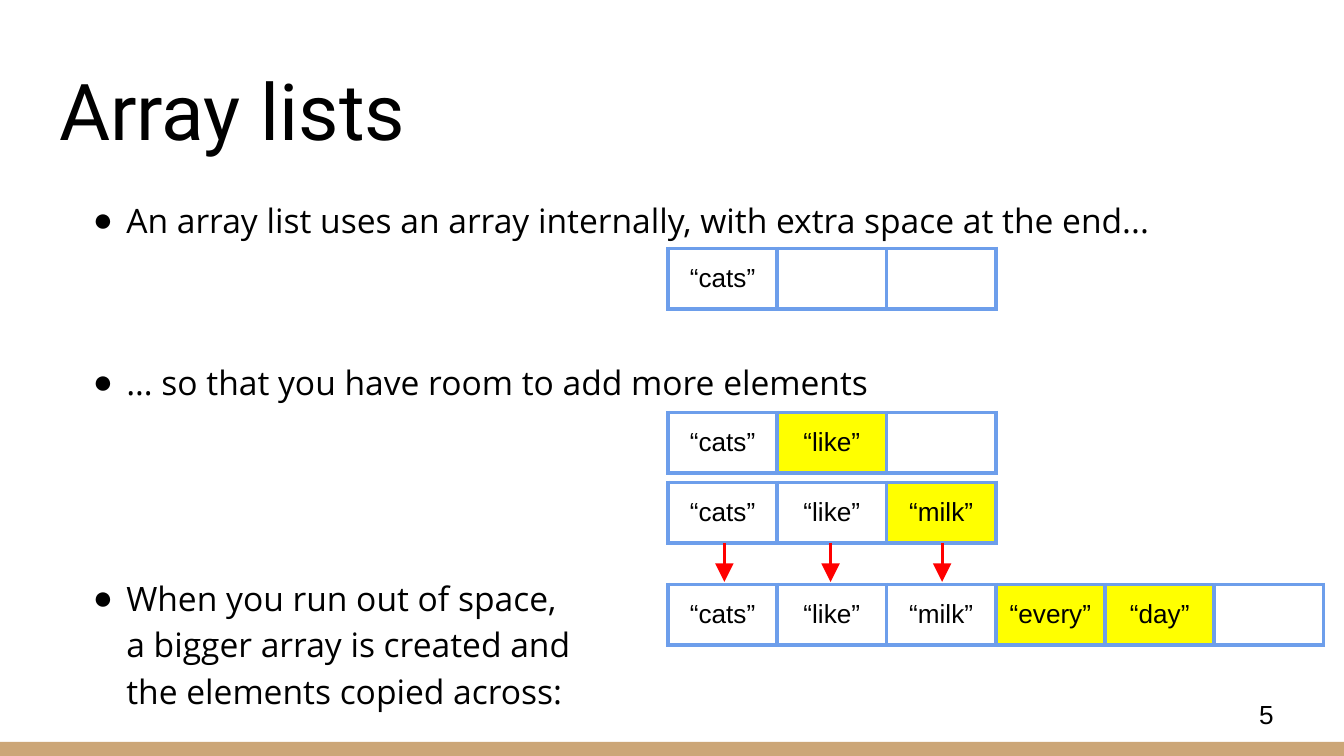
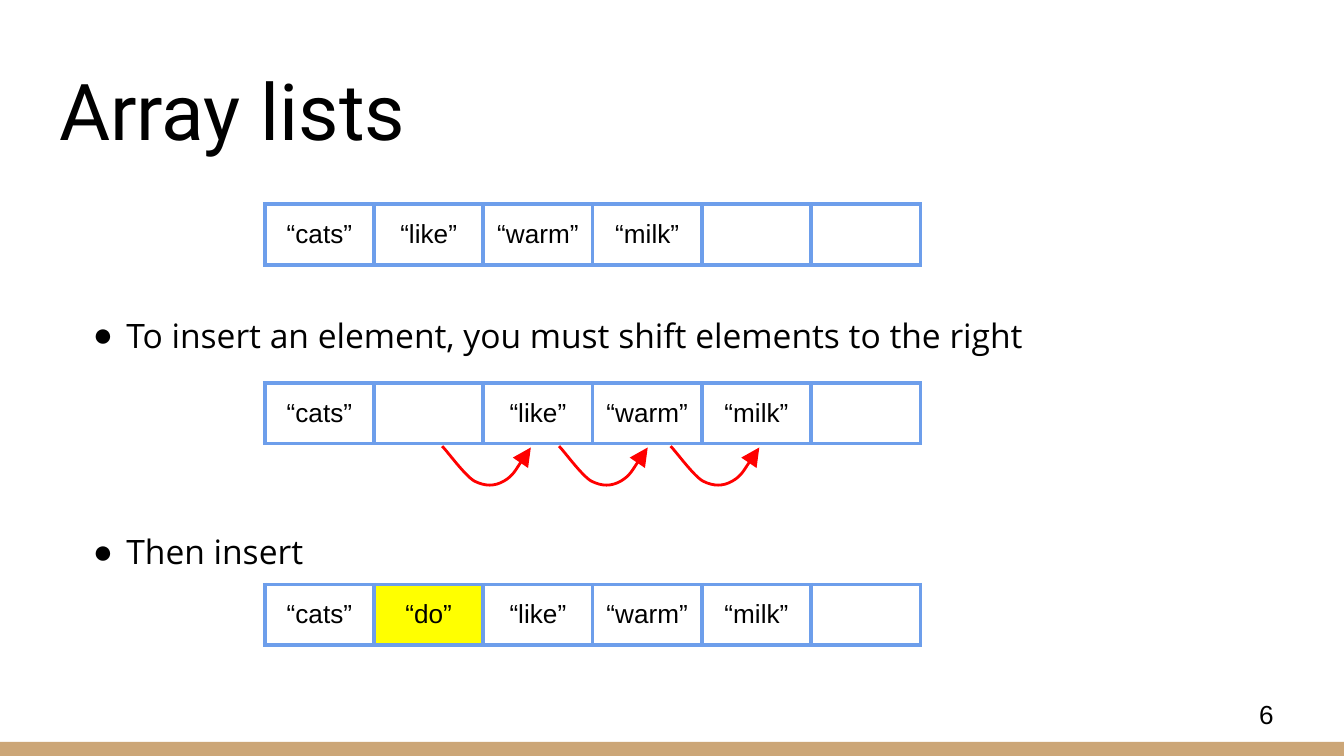
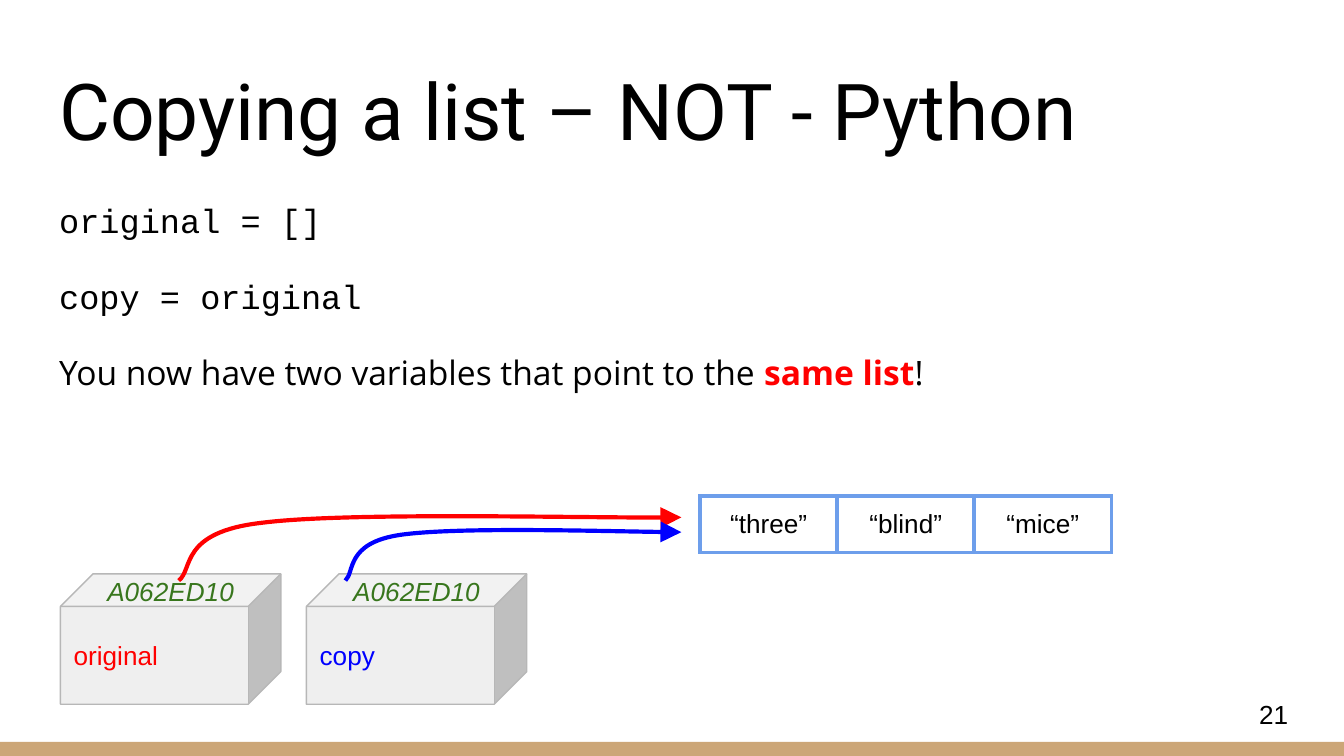
from dataclasses import dataclass

from lxml.etree import SubElement
from pptx import Presentation
from pptx.dml.color import RGBColor
from pptx.enum.shapes import MSO_CONNECTOR, MSO_SHAPE
from pptx.enum.text import MSO_ANCHOR, MSO_AUTO_SIZE, PP_ALIGN
from pptx.oxml.ns import qn
from pptx.util import Emu, Pt

EMU_PER_PX = 9144


@dataclass(frozen=True)
class Theme:
    black: str = "000000"
    band: str = "CCA677"
    grid: str = "6D9EEB"
    highlight: str = "FFFF00"
    red: str = "FF0000"
    blue: str = "0000FF"
    address: str = "38761D"
    cube_fill: str = "EFEFEF"
    cube_line: str = "B7B7B7"
    title_font: str = "Roboto"
    body_font: str = "Open Sans"
    code_font: str = "Courier New"
    label_font: str = "Arial"
    title_size: int = 42
    body_size: int = 18
    label_size: int = 14


THEME = Theme()


@dataclass(frozen=True)
class Span:
    text: str
    font: str = THEME.body_font
    color: str = THEME.black
    bold: bool = False


@dataclass(frozen=True)
class BodyPara:
    spans: tuple[Span, ...]
    bullet: bool = True
    after: int = 16


@dataclass(frozen=True)
class ArrayRow:
    """A one-row table; highlighted holds the indexes of the yellow cells."""
    left: int
    top: int
    words: tuple[str, ...]
    highlighted: tuple[int, ...] = ()
    width: int = 488
    height: int = 45


@dataclass(frozen=True)
class Variable:
    left: int
    name: str
    color: str
    pointer: tuple[tuple[int, int], ...]


def px(length: int) -> Emu:
    return Emu(length * EMU_PER_PX)


def rgb(color: str) -> RGBColor:
    return RGBColor.from_string(color)


# Text
def add_text(para, text: str, *, size: int = THEME.label_size,
             font: str = THEME.label_font, color: str = THEME.black,
             bold: bool = False, italic: bool = False, align=PP_ALIGN.LEFT) -> None:
    para.alignment = align
    for number, line in enumerate(text.split("\n")):
        if number:
            para.add_line_break()
        span = para.add_run()
        span.text = line
        span.font.size, span.font.name = Pt(size), font
        span.font.bold, span.font.italic = bold, italic
        span.font.color.rgb = rgb(color)


def set_frame(frame, anchor, margin_top: int = 10) -> None:
    frame.word_wrap = True
    frame.auto_size = MSO_AUTO_SIZE.NONE
    frame.vertical_anchor = anchor
    frame.margin_left = frame.margin_right = frame.margin_bottom = px(10)
    frame.margin_top = px(margin_top)


def place(shape, left: int, top: int, width: int, height: int) -> None:
    shape.left, shape.top = px(left), px(top)
    shape.width, shape.height = px(width), px(height)


def add_label(page, text: str, left: int, top: int, width: int, height: int,
              anchor=MSO_ANCHOR.TOP, **text_format) -> None:
    box = page.shapes.add_textbox(px(left), px(top), px(width), px(height))
    set_frame(box.text_frame, anchor)
    add_text(box.text_frame.paragraphs[0], text, **text_format)


def set_bullet(para, shown: bool) -> None:
    properties = para._p.get_or_add_pPr()
    properties.set("marL", str(px(50) if shown else 0))
    properties.set("indent", str(px(-25) if shown else 0))
    if shown:
        color = SubElement(properties, qn("a:buClr"))
        SubElement(color, qn("a:srgbClr"), val=THEME.black)
        SubElement(properties, qn("a:buChar"), char="●")
    else:
        SubElement(properties, qn("a:buNone"))


def fill_body(frame, body: list[BodyPara]) -> None:
    for number, item in enumerate(body):
        para = frame.add_paragraph() if number else frame.paragraphs[0]
        para.line_spacing = 1.15
        para.space_before, para.space_after = Pt(0), Pt(item.after)
        set_bullet(para, item.bullet)
        for span in item.spans:
            add_text(para, span.text, size=THEME.body_size, font=span.font,
                     color=span.color, bold=span.bold)


# Shared page parts
def add_page(deck, title: str, number: int, body: list[BodyPara],
             body_margin: int = 10):
    page = deck.slides.add_slide(deck.slide_layouts[1])
    heading, content = page.shapes.title, page.placeholders[1]
    place(heading, 34, 35, 932, 91)
    set_frame(heading.text_frame, MSO_ANCHOR.BOTTOM)
    add_text(heading.text_frame.paragraphs[0], title,
             size=THEME.title_size, font=THEME.title_font)
    place(content, 34, 134, 932, 367)
    set_frame(content.text_frame, MSO_ANCHOR.TOP, body_margin)
    fill_body(content.text_frame, body)
    add_label(page, str(number), 927, 510, 60, 43, MSO_ANCHOR.MIDDLE)
    add_shape(page, MSO_SHAPE.RECTANGLE, 0, 552, 1000, 11, THEME.band)
    return page


def add_shape(page, kind, left: int, top: int, width: int, height: int,
              fill: str, line: str | None = None):
    shape = page.shapes.add_shape(kind, px(left), px(top), px(width), px(height))
    shape.shadow.inherit = False
    shape.fill.solid()
    shape.fill.fore_color.rgb = rgb(fill)
    if line:
        shape.line.color.rgb = rgb(line)
        shape.line.width = Pt(0.75)
    else:
        shape.line.fill.background()
    return shape


# Array tables
def set_borders(cell) -> None:
    properties = cell._tc.get_or_add_tcPr()
    for side in ("a:lnL", "a:lnR", "a:lnT", "a:lnB"):
        border = SubElement(properties, qn(side), w=str(Pt(2.25)))
        color = SubElement(SubElement(border, qn("a:solidFill")), qn("a:srgbClr"))
        color.set("val", THEME.grid)


def add_array(page, row: ArrayRow) -> None:
    table = page.shapes.add_table(1, len(row.words), px(row.left), px(row.top),
                                  px(row.width), px(row.height)).table
    table.first_row = table.horz_banding = False
    for index, word in enumerate(row.words):
        cell = table.cell(0, index)
        cell.vertical_anchor = MSO_ANCHOR.MIDDLE
        cell.margin_left = cell.margin_right = px(10)
        cell.margin_top = cell.margin_bottom = px(5)
        set_borders(cell)
        if index in row.highlighted:
            cell.fill.solid()
            cell.fill.fore_color.rgb = rgb(THEME.highlight)
        else:
            cell.fill.background()
        if word:
            add_text(cell.text_frame.paragraphs[0], word, align=PP_ALIGN.CENTER)


# Arrows
def set_arrow(shape, color: str, width: float) -> None:
    shape.line.color.rgb = rgb(color)
    shape.line.width = Pt(width)
    SubElement(shape.line._get_or_add_ln(), qn("a:tailEnd"),
               type="triangle", w="lg", len="lg")


def add_arrow(page, x: int, top: int, bottom: int) -> None:
    arrow = page.shapes.add_connector(MSO_CONNECTOR.STRAIGHT,
                                      px(x), px(top), px(x), px(bottom))
    set_arrow(arrow, THEME.red, 1.5)
    SubElement(arrow._element.spPr, qn("a:effectLst"))


def add_curve(page, points, color: str, width: float) -> None:
    """Draw a start point followed by triples of Bézier points."""
    builder = page.shapes.build_freeform(*points[0], scale=EMU_PER_PX)
    builder.add_line_segments(points[1:], close=False)
    curve = builder.convert_to_shape()
    segments = list(curve._element.iter(qn("a:lnTo")))
    for start in range(0, len(segments), 3):
        bezier = SubElement(segments[start].getparent(), qn("a:cubicBezTo"))
        for segment in segments[start:start + 3]:
            bezier.append(segment[0])
            segment.getparent().remove(segment)
    curve.fill.background()
    set_arrow(curve, color, width)
    curve.shadow.inherit = False


# Pages
def add_growth_page(deck) -> None:
    page = add_page(deck, "Array lists", 5, [
        BodyPara((Span("An array list uses an array internally, "
                       "with extra space at the end..."),), after=62),
        BodyPara((Span("… so that you have room to add more elements"),), after=91),
        BodyPara((Span("When you run out of space,\na bigger array is created and\n"
                       "the elements copied across:"),)),
    ])
    for row in (
        ArrayRow(497, 185, ("“cats”", "", ""), width=244),
        ArrayRow(497, 307, ("“cats”", "“like”", ""), (1,), width=244),
        ArrayRow(497, 359, ("“cats”", "“like”", "“milk”"), (2,), width=244),
        ArrayRow(497, 435, ("“cats”", "“like”", "“milk”", "“every”", "“day”", ""),
                 (3, 4)),
    ):
        add_array(page, row)
    for x in (539, 618, 701):
        add_arrow(page, x, 404, 433)


def add_insert_page(deck) -> None:
    page = add_page(deck, "Array lists", 6, [
        BodyPara((Span("To insert an element, you must shift elements to the right"),),
                 after=91),
        BodyPara((Span("Then insert"),)),
    ], body_margin=96)
    for row in (
        ArrayRow(197, 152, ("“cats”", "“like”", "“warm”", "“milk”", "", "")),
        ArrayRow(197, 285, ("“cats”", "", "“like”", "“warm”", "“milk”", "")),
        ArrayRow(197, 435, ("“cats”", "“do”", "“like”", "“warm”", "“milk”", ""), (1,)),
    ):
        add_array(page, row)
    hop = ((0, 0), (4, 4), (17, 22), (24, 26), (32, 30), (39, 30), (46, 26),
           (53, 22), (63, 5), (66, 1))
    for left in (329, 416, 499):
        add_curve(page, [(left + x, 332 + y) for x, y in hop], THEME.red, 1.5)


def add_copy_page(deck) -> None:
    page = add_page(deck, "Copying a list – NOT - Python", 21, [
        BodyPara((Span("original = []", THEME.code_font),), bullet=False),
        BodyPara((Span("copy = original", THEME.code_font),), bullet=False),
        BodyPara((Span("You now have two variables that point to the "),
                  Span("same list", color=THEME.red, bold=True), Span("!")),
                 bullet=False),
    ])
    for variable in (
        Variable(45, "original", THEME.red,
                 ((133, 432), (144, 424), (133, 396), (195, 389),
                  (257, 381), (455, 386), (507, 385))),
        Variable(228, "copy", THEME.blue,
                 ((257, 432), (264, 426), (257, 404), (298, 398),
                  (340, 392), (472, 396), (507, 396))),
    ):
        cube = add_shape(page, MSO_SHAPE.CUBE, variable.left, 427, 164, 97,
                         THEME.cube_fill, THEME.cube_line)
        set_frame(cube.text_frame, MSO_ANCHOR.MIDDLE)
        add_text(cube.text_frame.paragraphs[0], variable.name, color=variable.color)
        add_label(page, "A062ED10", variable.left + 25, 418, 126, 30,
                  color=THEME.address, italic=True)
        add_curve(page, variable.pointer, variable.color, 2.25)
    add_array(page, ArrayRow(521, 369, ("“three”", "“blind”", "“mice”"),
                             width=306, height=42))


def main() -> None:
    deck = Presentation()
    deck.slide_width = px(1000)
    deck.slide_height = Emu(deck.slide_width * 9 // 16)
    add_growth_page(deck)
    add_insert_page(deck)
    add_copy_page(deck)
    deck.save("out.pptx")


if __name__ == "__main__":
    main()
